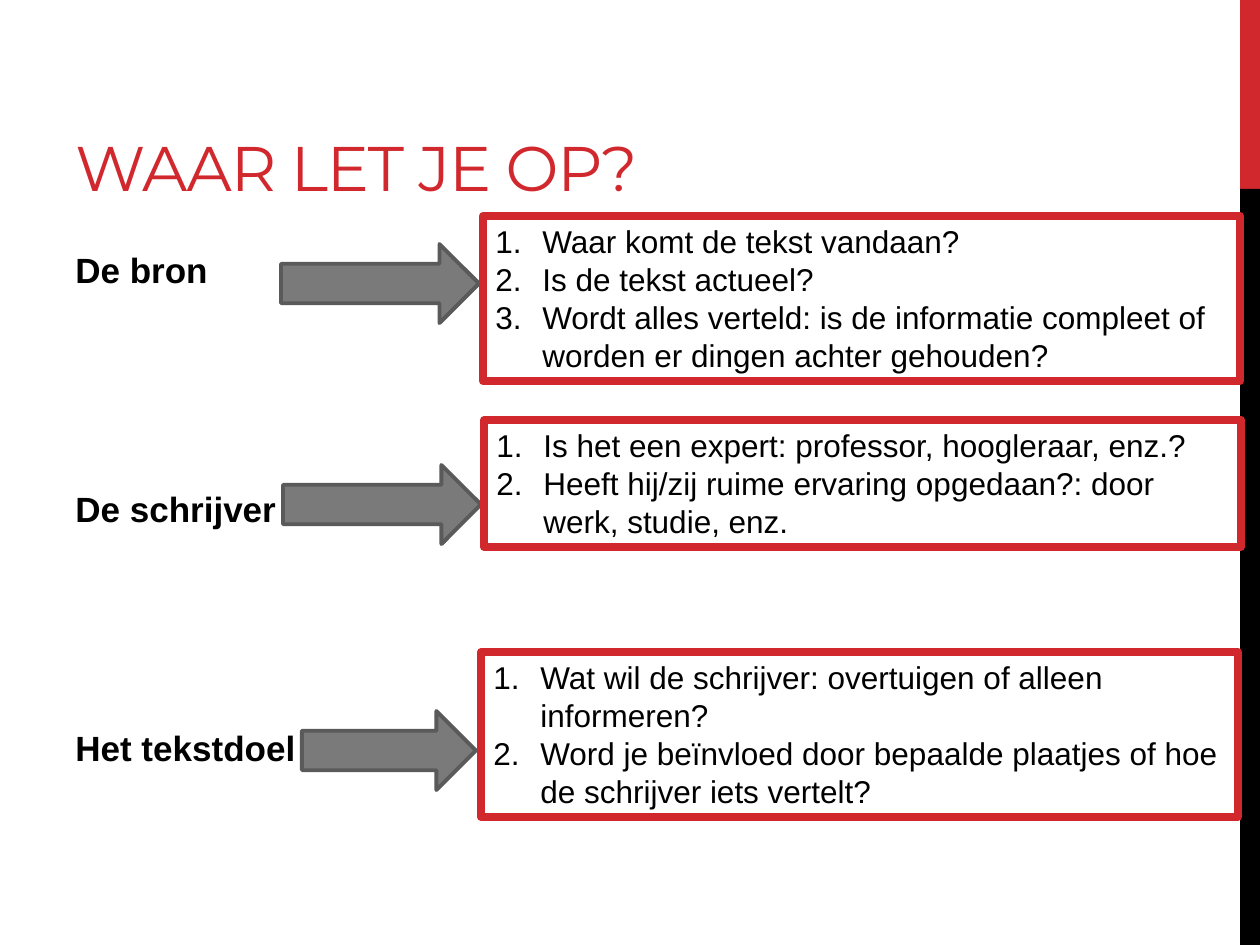
from pptx import Presentation
from pptx.dml.color import RGBColor
from pptx.enum.shapes import MSO_SHAPE as Preset
from pptx.enum.text import MSO_ANCHOR as Anchor, PP_ALIGN as Align
from pptx.util import Pt
from lxml.etree import SubElement
from pptx.oxml.ns import qn

SCALE = 914400 / 126
RED, BLACK, GREY, DARK_GREY = "D1282E", "000000", "7A7A7A", "5A5A5A"

ROWS = [
    {"label": "De bron", "label_box": (63, 245, 250, 50),
     "arrow_box": (281, 244, 198, 79), "question_box": (483, 216, 757, 165),
     "questions": ["Waar komt de tekst vandaan?",
                   "Is de tekst actueel?",
                   "Wordt alles verteld: is de informatie compleet of "
                   "worden er dingen achter gehouden?"]},
    {"label": "De schrijver", "label_box": (63, 483, 250, 50),
     "arrow_box": (283, 465, 198, 79), "question_box": (484, 420, 757, 127),
     "questions": ["Is het een expert: professor, hoogleraar, enz.?",
                   "Heeft hij/zij ruime ervaring opgedaan?: door werk, studie, enz."]},
    {"label": "Het tekstdoel", "label_box": (63, 722, 250, 50),
     "arrow_box": (302, 711, 174, 79), "question_box": (481, 652, 757, 165),
     "questions": ["Wat wil de schrijver: overtuigen of alleen informeren?",
                   "Word je beïnvloed door bepaalde plaatjes of hoe "
                   "de schrijver iets vertelt?"]},
]


def px(length):
    return round(length * SCALE)


def colour(hex_value):
    return RGBColor.from_string(hex_value)


def add_preset(slide, preset, box, fill=None, outline=None, weight=0):
    shape = slide.shapes.add_shape(preset, *map(px, box))
    shape.shadow.inherit = False
    if fill:
        shape.fill.solid()
        shape.fill.fore_color.rgb = colour(fill)
    else:
        shape.fill.background()
    if outline:
        shape.line.color.rgb = colour(outline)
        shape.line.width = Pt(weight)
    else:
        shape.line.fill.background()
    return shape


def write(paragraph, words, hex_value, **font_values):
    run = paragraph.add_run()
    run.text = words
    run.font.color.rgb = colour(hex_value)
    for attribute, value in font_values.items():
        setattr(run.font, attribute, value)
    return run


def add_words(slide, box, anchor, words, hex_value, **font_values):
    frame = slide.shapes.add_textbox(*map(px, box)).text_frame
    frame.word_wrap = True
    frame.vertical_anchor = anchor
    return write(frame.paragraphs[0], words, hex_value, **font_values)


def number(paragraph):
    properties = paragraph._p.get_or_add_pPr()
    for attribute, value in {"marL": px(47), "indent": px(-47)}.items():
        properties.set(attribute, str(value))
    SubElement(properties, qn("a:buFont"), typeface="+mj-lt")
    SubElement(properties, qn("a:buAutoNum"), type="arabicPeriod")


def add_side_bar(slide, box):
    left, top, width, height = box
    red_height = height // 5
    add_preset(slide, Preset.RECTANGLE, (left, top, width, red_height), RED)
    add_preset(slide, Preset.RECTANGLE,
               (left, top + red_height, width, height - red_height), BLACK)


def add_title(slide, box):
    title = add_words(slide, box, Anchor.BOTTOM, "WAAR LET JE OP?", RED,
                      name="Montserrat", size=Pt(36))
    title.font._element.set("spc", "-60")


def add_questions(slide, box, questions):
    frame = add_preset(slide, Preset.RECTANGLE, box,
                       outline=RED, weight=4.5).text_frame
    frame.word_wrap = True
    frame.vertical_anchor = Anchor.TOP
    for index, question in enumerate(questions):
        paragraph = frame.add_paragraph() if index else frame.paragraphs[0]
        paragraph.alignment = Align.LEFT
        number(paragraph)
        write(paragraph, question, BLACK, name="Arial", size=Pt(18))


def add_row(slide, label, label_box, arrow_box, question_box, questions):
    add_words(slide, label_box, Anchor.MIDDLE, label, BLACK,
              name="Arial", size=Pt(20), bold=True)
    add_preset(slide, Preset.RIGHT_ARROW, arrow_box, GREY, DARK_GREY, 2.25)
    add_questions(slide, question_box, questions)


def main():
    deck = Presentation()
    deck.slide_width, deck.slide_height = px(1260), px(945)
    slide = deck.slides.add_slide(deck.slide_layouts[6])
    add_side_bar(slide, (1240, 0, 20, 945))
    add_title(slide, (63, 21, 798, 189))
    for row in ROWS:
        add_row(slide, **row)
    deck.save("out.pptx")


if __name__ == "__main__":
    main()
